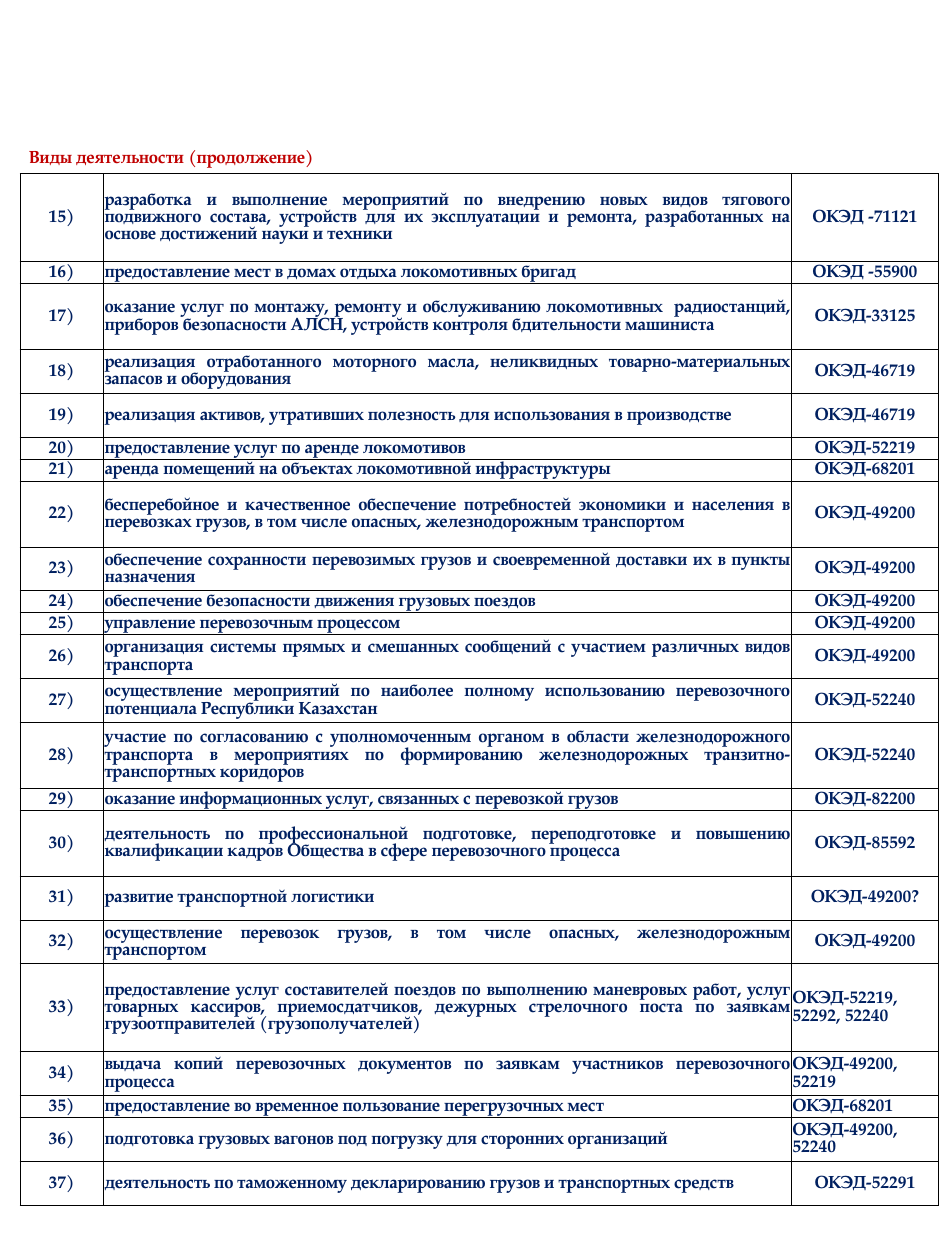
from lxml import etree
from pptx import Presentation, util as u
from pptx.dml.color import RGBColor
from pptx.enum import text
from pptx.oxml.ns import qn

THEME = {
    "font": "TeX Gyre Pagella",
    "size": u.Pt(10),
    "line_spacing": u.Pt(9.9),
    "title": RGBColor.from_string("C00000"),
    "body": RGBColor.from_string("002060"),
    "border": "000000",
    "border_width": u.Pt(0.5),
}
FIRST_NUMBER = 15
CENTER, JUSTIFY = text.PP_ALIGN.CENTER, text.PP_ALIGN.JUSTIFY

# Row height in lines, activity, classifier code
ACTIVITIES = [
    (4, "разработка и выполнение мероприятий по внедрению новых видов тягового подвижного состава, устройств для их эксплуатации и ремонта, разработанных на основе достижений науки и техники", "ОКЭД -71121"),
    (1, "предоставление мест в домах отдыха локомотивных бригад", "ОКЭД -55900"),
    (3, "оказание услуг по монтажу, ремонту и обслуживанию локомотивных  радиостанций, приборов безопасности АЛСН, устройств контроля бдительности машиниста", "ОКЭД-33125"),
    (2, "реализация отработанного моторного масла, неликвидных товарно-материальных запасов и оборудования", "ОКЭД-46719"),
    (2, "реализация активов, утративших полезность для использования в производстве", "ОКЭД-46719"),
    (1, "предоставление услуг по аренде локомотивов", "ОКЭД-52219"),
    (1, "аренда помещений на объектах локомотивной инфраструктуры", "ОКЭД-68201"),
    (3, "бесперебойное и качественное обеспечение потребностей экономики и населения в перевозках грузов, в том числе опасных, железнодорожным транспортом", "ОКЭД-49200"),
    (2, "обеспечение сохранности перевозимых грузов и своевременной доставки их в пункты назначения", "ОКЭД-49200"),
    (1, "обеспечение безопасности движения грузовых поездов", "ОКЭД-49200"),
    (1, "управление перевозочным процессом", "ОКЭД-49200"),
    (2, "организация системы прямых и смешанных сообщений с участием различных видов транспорта", "ОКЭД-49200"),
    (2, "осуществление мероприятий по наиболее полному использованию перевозочного потенциала Республики Казахстан", "ОКЭД-52240"),
    (3, "участие по согласованию с уполномоченным органом в области железнодорожного транспорта в мероприятиях по формированию железнодорожных транзитно-транспортных коридоров", "ОКЭД-52240"),
    (1, "оказание информационных услуг, связанных с перевозкой грузов", "ОКЭД-82200"),
    (3, "деятельность по профессиональной подготовке, переподготовке и повышению квалификации кадров Общества в сфере перевозочного процесса", "ОКЭД-85592"),
    (2, "развитие транспортной логистики", "ОКЭД-49200?"),
    (2, "осуществление перевозок грузов, в том числе опасных, железнодорожным транспортом", "ОКЭД-49200"),
    (4, "предоставление услуг составителей поездов по выполнению маневровых работ, услуг товарных кассиров, приемосдатчиков, дежурных стрелочного поста по заявкам грузоотправителей (грузополучателей)", "ОКЭД-52219, 52292, 52240"),
    (2, "выдача копий перевозочных документов по заявкам участников перевозочного процесса", "ОКЭД-49200, 52219"),
    (1, "предоставление во временное пользование перегрузочных мест", "ОКЭД-68201"),
    (2, "подготовка грузовых вагонов под погрузку для сторонних организаций", "ОКЭД-49200, 52240"),
    (2, "деятельность по таможенному декларированию грузов и транспортных средств", "ОКЭД-52291"),
]
JUSTIFIED_CODES = range(33, 37)


def write(paragraph, content, color, alignment):
    run = paragraph.add_run()
    run.text = content
    paragraph.alignment = alignment
    for name, value in {"name": THEME["font"], "size": THEME["size"], "bold": True}.items():
        setattr(run.font, name, value)
    run.font.color.rgb = color


def add_borders(cell):
    properties = cell._tc.get_or_add_tcPr()
    for side in ("lnL", "lnR", "lnT", "lnB"):
        line = etree.SubElement(properties, qn(f"a:{side}"), w=str(THEME["border_width"]))
        fill = etree.SubElement(line, qn("a:solidFill"))
        etree.SubElement(fill, qn("a:srgbClr"), val=THEME["border"])


presentation = Presentation()
presentation.slide_width, presentation.slide_height = u.Inches(7.5), u.Inches(10)
slide = presentation.slides.add_slide(presentation.slide_layouts[5])

title = slide.shapes.title
for name, value in {"left": 0.13, "top": 1.11, "width": 2.7, "height": 0.27}.items():
    setattr(title, name, u.Inches(value))
title_format = {
    "word_wrap": False,
    "auto_size": text.MSO_AUTO_SIZE.SHAPE_TO_FIT_TEXT,
    "vertical_anchor": text.MSO_ANCHOR.TOP,
}
for name, value in title_format.items():
    setattr(title.text_frame, name, value)
write(title.text_frame.paragraphs[0], "Виды деятельности (продолжение)",
      THEME["title"], text.PP_ALIGN.LEFT)

table_height = u.Inches(8.19)
table = slide.shapes.add_table(len(ACTIVITIES), 3, u.Inches(0.16), u.Inches(1.38),
                               u.Inches(7.29), table_height).table
table.first_row = table.horz_banding = False
for column, width in zip(table.columns, (0.66, 5.46, 1.17)):
    column.width = u.Inches(width)

total_lines = sum(lines for lines, _, _ in ACTIVITIES)
cell_format = {
    "margin_left": u.Inches(0.01),
    "margin_right": u.Inches(0.01),
    "margin_top": u.Inches(0.01),
    "margin_bottom": 0,
    "vertical_anchor": text.MSO_ANCHOR.MIDDLE,
}
for number, (row, (lines, activity, code)) in enumerate(zip(table.rows, ACTIVITIES), FIRST_NUMBER):
    row.height = table_height * lines // total_lines
    code_alignment = JUSTIFY if number in JUSTIFIED_CODES else CENTER
    contents = ((f"{number})", CENTER), (activity, JUSTIFY), (code, code_alignment))
    for cell, (content, alignment) in zip(row.cells, contents):
        for name, value in cell_format.items():
            setattr(cell, name, value)
        add_borders(cell)
        cell.fill.background()
        paragraph = cell.text_frame.paragraphs[0]
        paragraph.line_spacing = THEME["line_spacing"]
        write(paragraph, content, THEME["body"], alignment)

presentation.save("out.pptx")
